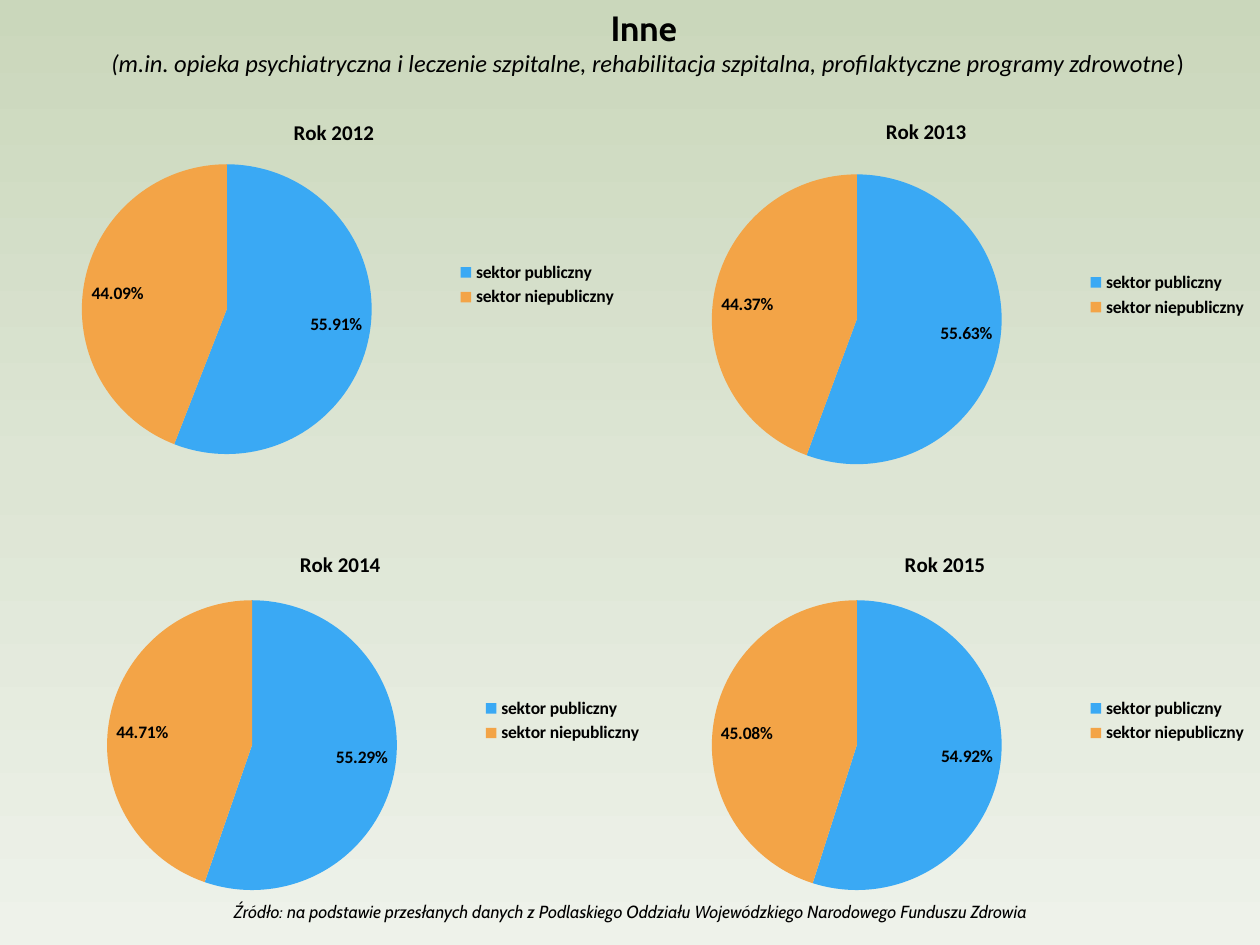
from copy import deepcopy
from pptx import Presentation
from pptx.chart.data import CategoryChartData as Data
from pptx.dml.color import RGBColor as RGB
from pptx.enum.chart import XL_CHART_TYPE as Kind, XL_LABEL_POSITION as Spot
from pptx.enum.chart import XL_LEGEND_POSITION as Side
from pptx.enum.text import MSO_ANCHOR as Anchor, PP_ALIGN as Align
from pptx.oxml import parse_xml
from pptx.oxml.ns import nsdecls
from pptx.util import Inches, Pt

HEAD = "Inne "
NOTE = ("(m.in. opieka psychiatryczna i leczenie szpitalne, rehabilitacja szpitalna, "
        "profilaktyczne programy zdrowotne")
SOURCE = ("Źródło: na podstawie przesłanych danych z Podlaskiego Oddziału "
          "Wojewódzkiego Narodowego Funduszu Zdrowia")
SECTORS = {"sektor publiczny": "3AA9F4", "sektor niepubliczny": "F3A447"}
YEARS = [
    ("Rok 2012", 0.5591, 0, 0.76, {"x": 0.46, "y": 0.05}),
    ("Rok 2013", 0.5563, 5, 0.84, {"x": 0.4, "y": 0.02}),
    ("Rok 2014", 0.5529, 0.2, 4.22, None),
    ("Rok 2015", 0.5492, 5, 4.22, None),
]
PIE = {"x": 0.13, "y": 0.18, "w": 0.46, "h": 0.77}
BACK = ["CAD7BB", "DDE5D4", "EEF2EA"]


def color(code):
    return RGB.from_string(code)


def style(font, size, name="Calibri", bold=False, italic=False):
    font.size, font.name = Pt(size), name
    font.bold, font.italic = bold, italic
    font.color.rgb = color("000000")


def place(shape, *box):
    shape.left, shape.top, shape.width, shape.height = map(Inches, box)
    frame = shape.text_frame
    frame.word_wrap = True
    frame.vertical_anchor = Anchor.TOP
    return frame


def arrange(node, index, box):
    for old in node.xpath("c:layout"):
        node.remove(old)
    modes = "".join(f'<c:{k}Mode val="edge"/>' for k in box if k in "xy")
    sizes = "".join(f'<c:{k} val="{v}"/>' for k, v in box.items())
    target = '<c:layoutTarget val="inner"/>' if "w" in box else ""
    node.insert(index, parse_xml(
        f'<c:layout {nsdecls("c")}><c:manualLayout>{target}{modes}{sizes}'
        '</c:manualLayout></c:layout>'))


def add_pie(slide, year, share, left, top, spot):
    data = Data(number_format="0.00%")
    data.categories = list(SECTORS)
    data.add_series("Series 1", (share, round(1 - share, 4)))
    chart = slide.shapes.add_chart(
        Kind.PIE, Inches(left), Inches(top), Inches(5), Inches(3), data).chart
    style(chart.font, 10, bold=True)
    chart.has_title = True
    frame = chart.chart_title.text_frame
    frame.text = year
    style(frame.paragraphs[0].runs[0].font, 12, bold=True)
    chart.has_legend = True
    chart.legend.position = Side.RIGHT
    chart.legend.include_in_layout = False
    plot = chart.plots[0]
    plot.vary_by_categories = True
    for i, code in enumerate(SECTORS.values()):
        fill = plot.series[0].points[i].format.fill
        fill.solid()
        fill.fore_color.rgb = color(code)
    labels = plot.series[0].data_labels
    labels.show_value = True
    labels.number_format = "0.00%"
    labels.number_format_is_linked = False
    labels.position = Spot.INSIDE_END
    style(labels.font, 10, bold=True)
    arrange(chart.element.xpath("c:chart/c:plotArea")[0], 0, PIE)
    if spot:
        arrange(chart.element.xpath("c:chart/c:title")[0], 1, spot)


def paint(slide):
    fill = slide.background.fill
    fill.gradient()
    fill.gradient_angle = 270
    first = slide.element.xpath(".//p:bgPr//a:gs")[0]
    first.addnext(deepcopy(first))
    for i, (stop, code) in enumerate(zip(fill.gradient_stops, BACK)):
        stop.color.rgb = color(code)
        stop.position = i / 2


def main():
    deck = Presentation()
    deck.slide_width, deck.slide_height = Inches(10), Inches(7.5)
    slide = deck.slides.add_slide(deck.slide_layouts[5])
    paint(slide)

    frame = place(slide.shapes.title, 0.28, 0, 9.72, 0.67)
    frame.text = HEAD
    style(frame.paragraphs[0].runs[0].font, 20, "Cabin", bold=True)
    line = frame.add_paragraph()
    for text, slant in ((NOTE, True), (")", False)):
        run = line.add_run()
        run.text = text
        style(run.font, 14, italic=slant)
    for part in frame.paragraphs:
        part.alignment = Align.CENTER

    for year in YEARS:
        add_pie(slide, *year)

    frame = place(slide.shapes.add_textbox(0, 0, 0, 0), 1.3, 7.1, 7.4, 0.27)
    frame.text = SOURCE
    frame.paragraphs[0].alignment = Align.CENTER
    style(frame.paragraphs[0].runs[0].font, 10, "Cabin", italic=True)
    deck.save("out.pptx")


if __name__ == "__main__":
    main()
